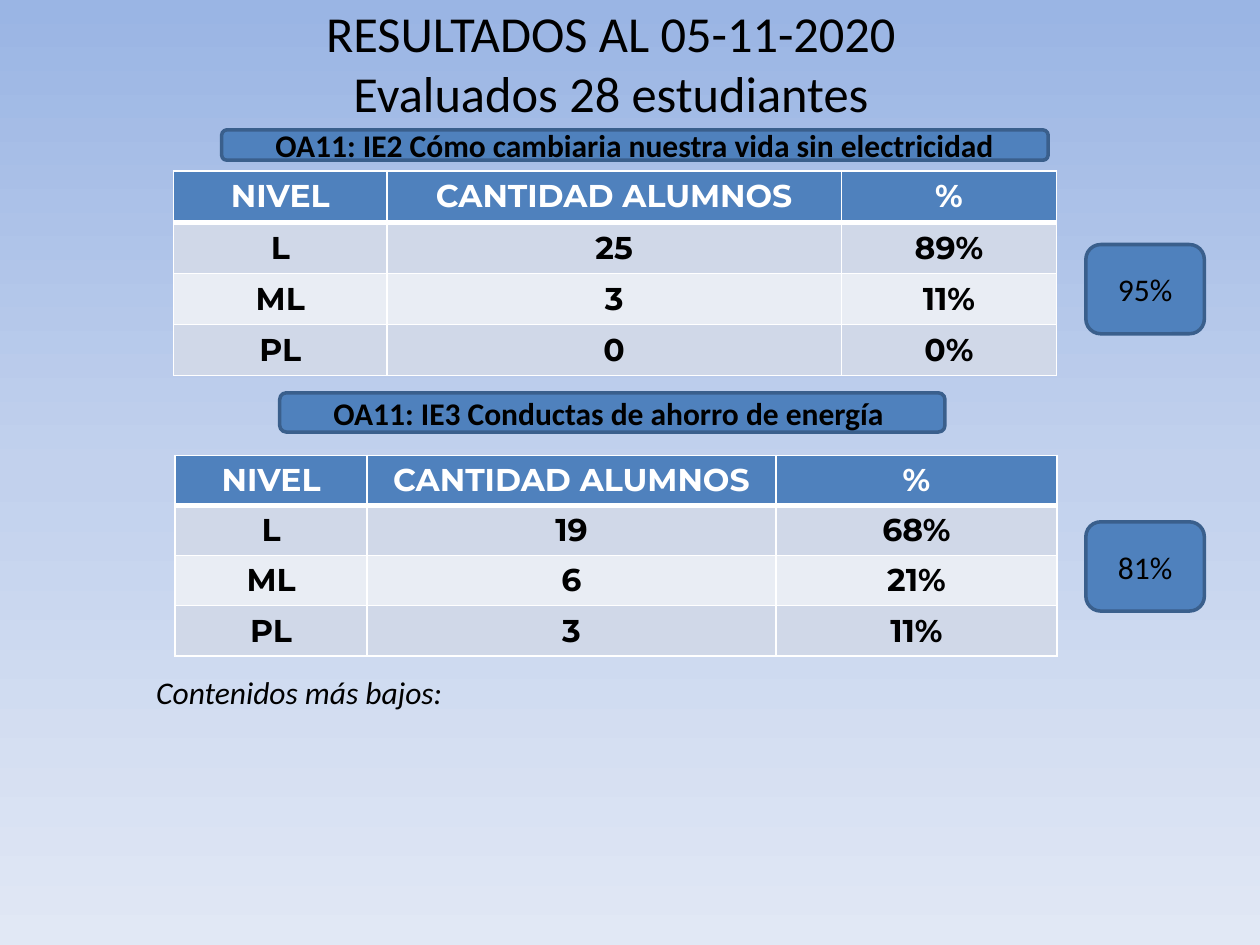
from copy import deepcopy

from lxml.etree import SubElement
from pptx import Presentation
from pptx.dml.color import RGBColor
from pptx.enum.shapes import MSO_SHAPE as Shape
from pptx.enum.text import MSO_ANCHOR as Anchor, MSO_AUTO_SIZE as AutoSize, PP_ALIGN as Align
from pptx.oxml.ns import qn
from pptx.util import Cm, Pt

BLUE, DARK_BLUE, WHITE, BLACK = "4F81BD", "3A5F8C", "FFFFFF", "000000"
ROW_FILLS = [BLUE, "D0D8E8", "E9EDF4", "D0D8E8"]
hex_color = RGBColor.from_string


def write(frame, text, size=18, font="Calibri", color=BLACK, bold=False,
          italic=False, align=Align.CENTER, anchor=Anchor.MIDDLE):
    """Fill a text frame with one paragraph; newlines become line breaks."""
    frame.word_wrap = True
    frame.vertical_anchor = anchor
    para = frame.paragraphs[0]
    para.alignment = align
    for number, line in enumerate(text.split("\n")):
        if number:
            para.add_line_break()
        span = para.add_run()
        span.text = line
        span.font.size, span.font.name = Pt(size), font
        span.font.bold, span.font.italic = bold, italic
        span.font.color.rgb = hex_color(color)


def set_borders(cell, bottom):
    """Draw white cell borders, 1 pt wide except for the bottom one."""
    properties = cell._tc.get_or_add_tcPr()
    widths = {"a:lnL": 1, "a:lnR": 1, "a:lnT": 1, "a:lnB": bottom}
    for place, (side, width) in enumerate(widths.items()):
        line = SubElement(properties, qn(side), w=str(Pt(width)))
        fill = SubElement(line, qn("a:solidFill"))
        SubElement(fill, qn("a:srgbClr"), val=WHITE)
        properties.insert(place, line)


deck = Presentation()
deck.slide_width, deck.slide_height = Cm(25.4), Cm(19.05)
page = deck.slides.add_slide(deck.slide_layouts[5])

# Background: three-step gradient from top to bottom
background = page.background.fill
background.gradient()
background.gradient_angle = 270
stop_list = page.element.find(".//" + qn("a:gsLst"))
stop_list.append(deepcopy(stop_list[-1]))
gradient = [(0, "9AB5E4"), (0.5, "C2D1ED"), (1, "E1E8F5")]
for stop, (position, color) in zip(background.gradient_stops, gradient):
    stop.position = position
    stop.color.rgb = hex_color(color)

title = page.shapes.title
title.left, title.top, title.width, title.height = Cm(0.89), Cm(0), Cm(22.86), Cm(2.51)
title.text_frame.auto_size = AutoSize.NONE
write(title.text_frame, "RESULTADOS AL 05-11-2020\nEvaluados 28 estudiantes", size=28.8)

# Result tables: left, top, row height, column widths, counts and percentages
tables = [
    (3.5, 3.45, 1.03, [4.3, 9.16, 4.34], [("25", "89%"), ("3", "11%"), ("0", "0%")]),
    (3.53, 9.18, 1.01, [3.87, 8.24, 5.67], [("19", "68%"), ("6", "21%"), ("3", "11%")]),
]
for left, top, row_height, widths, results in tables:
    rows = [("NIVEL", "CANTIDAD ALUMNOS", "%")]
    rows += [(level, *result) for level, result in zip(("L", "ML", "PL"), results)]
    table = page.shapes.add_table(len(rows), len(widths), Cm(left), Cm(top),
                                  Cm(sum(widths)), Cm(row_height * len(rows))).table
    for column, width in zip(table.columns, widths):
        column.width = Cm(width)
    for r, row in enumerate(rows):
        table.rows[r].height = Cm(row_height)
        for c, text in enumerate(row):
            cell = table.cell(r, c)
            cell.margin_top = cell.margin_bottom = Cm(0.1)
            cell.vertical_anchor = Anchor.MIDDLE
            cell.fill.solid()
            cell.fill.fore_color.rgb = hex_color(ROW_FILLS[r])
            set_borders(cell, bottom=1 if r else 3)
            write(cell.text_frame, text, font="Montserrat", bold=True,
                  color=BLACK if r else WHITE, anchor=None)

# Headings above the tables and overall percentages beside them
boxes = [
    (4.47, 2.62, 16.66, 0.61, "OA11: IE2 Cómo cambiaria nuestra vida sin electricidad", True),
    (5.64, 7.92, 13.41, 0.79, "OA11: IE3 Conductas de ahorro de energía ", True),
    (21.89, 4.93, 2.39, 1.8, "95%", False),
    (21.89, 10.52, 2.39, 1.8, "81%", False),
]
for left, top, width, height, text, bold in boxes:
    box = page.shapes.add_shape(Shape.ROUNDED_RECTANGLE, Cm(left), Cm(top), Cm(width), Cm(height))
    box.shadow.inherit = False
    box.fill.solid()
    box.fill.fore_color.rgb = hex_color(BLUE)
    box.line.color.rgb = hex_color(DARK_BLUE)
    box.line.width = Pt(2)
    write(box.text_frame, text, bold=bold)

note = page.shapes.add_textbox(Cm(2.9), Cm(13.44), Cm(19.81), Cm(1.8))
write(note.text_frame, "Contenidos más bajos:", italic=True, align=Align.LEFT, anchor=Anchor.TOP)

deck.save("out.pptx")
